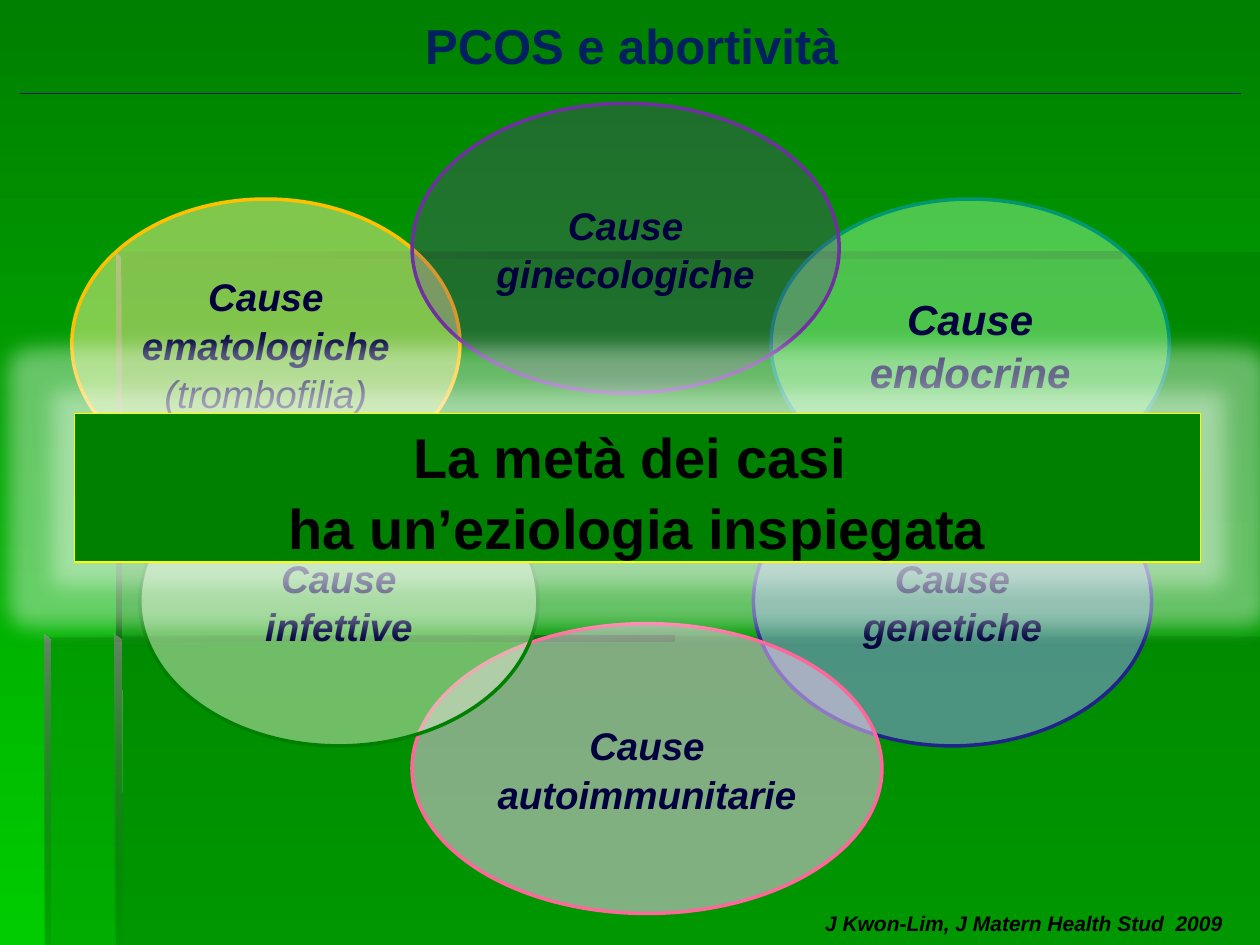
"""Build a slide on the causes of miscarriage in PCOS."""
from lxml import etree
from pptx import Presentation, util as u
from pptx.dml.color import RGBColor
from pptx.enum import shapes, text
from pptx.oxml.ns import qn

BLACK = RGBColor(0x00, 0x00, 0x00)
WHITE = RGBColor(0xFF, 0xFF, 0xFF)
NAVY = RGBColor(0x00, 0x20, 0x60)
INK = RGBColor(0x00, 0x00, 0x3E)
GREEN = RGBColor(0x00, 0x80, 0x00)
BRIGHT_GREEN = RGBColor(0x00, 0xCC, 0x00)
DARK_GREEN = RGBColor(0x00, 0x66, 0x00)
DEEP_GREEN = RGBColor(0x00, 0x5E, 0x00)
GRAY_GREEN = RGBColor(0x66, 0x86, 0x66)
YELLOW = RGBColor(0xFF, 0xFF, 0x00)
MINT = RGBColor(0x99, 0xFF, 0x99)
TEAL = RGBColor(0x00, 0x97, 0x71)
LAVENDER = RGBColor(0x99, 0x99, 0xFF)
INDIGO = RGBColor(0x22, 0x22, 0x8B)
CREAM = RGBColor(0xFF, 0xFF, 0x99)
AMBER = RGBColor(0xFF, 0xC0, 0x00)
PURPLE = RGBColor(0x70, 0x30, 0xA0)
PINK = RGBColor(0xFF, 0xCC, 0xFF)
ROSE = RGBColor(0xFF, 0x66, 0x99)
PALE_GREEN = RGBColor(0xDF, 0xEE, 0xCC)


def set_opacity(shape, percents):
    colors = shape._element.spPr.iter(qn("a:srgbClr"))
    for color, percent in zip(colors, percents):
        if percent < 100:
            etree.SubElement(color, qn("a:alpha"), val=str(percent * 1000))


def write(shape, lines, size, color, align=text.PP_ALIGN.CENTER, spacing=1.05):
    frame = shape.text_frame
    for index, (words, bold, italic) in enumerate(lines):
        paragraph = frame.add_paragraph() if index else frame.paragraphs[0]
        paragraph.alignment = align
        paragraph.line_spacing = spacing
        run = paragraph.add_run()
        run.text = words
        run.font.name = "Arial"
        run.font.size = u.Pt(size)
        run.font.bold = bold
        run.font.italic = italic
        run.font.color.rgb = color


presentation = Presentation()
presentation.slide_width = u.Inches(10)
presentation.slide_height = u.Inches(7.5)
slide = presentation.slides.add_slide(presentation.slide_layouts[6])

background = slide.background.fill
background.gradient()
background.gradient_angle = 270
for stop, color, position in zip(background.gradient_stops, (GREEN, BRIGHT_GREEN), (0, 1)):
    stop.color.rgb = color
    stop.position = position

panels = [
    ([(0.92, 5.05), (0.92, 7.5), (10, 7.5), (10, 5.05)], [DARK_GREEN], [30], 0),
    ([(0.94, 5.06), (0.36, 5.06), (0.36, 7.5), (10, 7.5), (10, 2), (0.94, 2)],
     [DARK_GREEN], [30], 0),
    ([(0.92, 2), (0.92, 2.05), (8.91, 2.05), (8.91, 2)],
     [DARK_GREEN, DEEP_GREEN], [0, 100], 0),
    ([(0.92, 2), (0.92, 5.1), (0.97, 5.1), (0.96, 2.04)],
     [GRAY_GREEN, DARK_GREEN], [100, 100], 270),
    ([(0.91, 7.5), (0.97, 7.5), (0.96, 5.08), (0.91, 5.04)],
     [GRAY_GREEN, DARK_GREEN], [100, 0], 270),
    ([(0.35, 5.04), (0.35, 5.09), (5.35, 5.09), (5.35, 5.04)],
     [DARK_GREEN, DEEP_GREEN], [0, 100], 0),
    ([(0.35, 5.04), (0.35, 7.5), (0.4, 7.5), (0.4, 5.09)],
     [GRAY_GREEN, DARK_GREEN], [100, 10], 270),
]
for points, colors, opacities, angle in panels:
    corners = [(u.Inches(x), u.Inches(y)) for x, y in points]
    builder = slide.shapes.build_freeform(*corners[0])
    builder.add_line_segments(corners[1:], close=True)
    panel = builder.convert_to_shape()
    panel.shadow.inherit = False
    panel.line.fill.background()
    if len(colors) == 1:
        panel.fill.solid()
        panel.fill.fore_color.rgb = colors[0]
    else:
        panel.fill.gradient()
        panel.fill.gradient_angle = angle
        for stop, color, position in zip(panel.fill.gradient_stops, colors, (0, 1)):
            stop.color.rgb = color
            stop.position = position
    set_opacity(panel, opacities)

title = slide.shapes.add_textbox(u.Inches(0.15), u.Inches(0.05), u.Inches(9.73), u.Inches(0.53))
title.text_frame.word_wrap = True
write(title, [("PCOS e abortività", True, False)], 28, NAVY)

rule = slide.shapes.add_connector(
    shapes.MSO_CONNECTOR.STRAIGHT, u.Inches(9.85), u.Inches(0.74), u.Inches(0.16), u.Inches(0.74))
rule.line.color.rgb = NAVY
rule.line.width = u.Pt(0.75)
etree.SubElement(rule._element.spPr, qn("a:effectLst"))

causes = [
    (6.12, 1.58, 3.16, MINT, 50, TEAL, 24, ["Cause endocrine"]),
    (5.98, 3.62, 3.16, LAVENDER, 50, INDIGO, 22, ["Cause genetiche"]),
    (0.57, 1.58, 3.08, CREAM, 50, AMBER, 22, ["Cause ematologiche", "(trombofilia)"]),
    (3.27, 0.82, 3.39, PURPLE, 28, PURPLE, 22, ["Cause ginecologiche"]),
    (3.27, 4.95, 3.73, PINK, 50, ROSE, 22, ["Cause autoimmunitarie"]),
    (1.11, 3.62, 3.16, PALE_GREEN, 50, GREEN, 22, ["Cause infettive"]),
]
for left, top, width, fill, opacity, outline, size, lines in causes:
    ellipse = slide.shapes.add_shape(
        shapes.MSO_SHAPE.OVAL, u.Inches(left), u.Inches(top), u.Inches(width), u.Inches(2.3))
    ellipse.shadow.inherit = False
    ellipse.fill.solid()
    ellipse.fill.fore_color.rgb = fill
    set_opacity(ellipse, [opacity])
    ellipse.line.color.rgb = outline
    ellipse.line.width = u.Pt(2)
    ellipse.text_frame.vertical_anchor = text.MSO_ANCHOR.MIDDLE
    write(ellipse, [(line, index == 0, True) for index, line in enumerate(lines)], size, INK)

banner = slide.shapes.add_shape(
    shapes.MSO_SHAPE.RECTANGLE, u.Inches(0.59), u.Inches(3.28), u.Inches(8.94), u.Inches(1.18))
banner.shadow.inherit = False
banner.fill.solid()
banner.fill.fore_color.rgb = GREEN
banner.line.color.rgb = YELLOW
banner.line.width = u.Pt(0.75)
banner.text_frame.vertical_anchor = text.MSO_ANCHOR.TOP
effects = banner._element.spPr.find(qn("a:effectLst"))
glow = etree.SubElement(effects, qn("a:glow"), rad=str(u.Inches(0.35)))
glow_color = etree.SubElement(glow, qn("a:srgbClr"), val=str(WHITE))
etree.SubElement(glow_color, qn("a:alpha"), val="40000")
write(banner, [("La metà dei casi ", True, False),
               ("ha un’eziologia inspiegata", True, False)], 32, BLACK)

citation = slide.shapes.add_textbox(u.Inches(6.45), u.Inches(7.18), u.Inches(3.5), u.Inches(0.3))
citation.text_frame.word_wrap = False
citation.text_frame.auto_size = text.MSO_AUTO_SIZE.SHAPE_TO_FIT_TEXT
write(citation, [("J Kwon-Lim, J Matern Health Stud  2009", True, True)], 12, BLACK,
      text.PP_ALIGN.LEFT, 1.0)

presentation.save("out.pptx")
